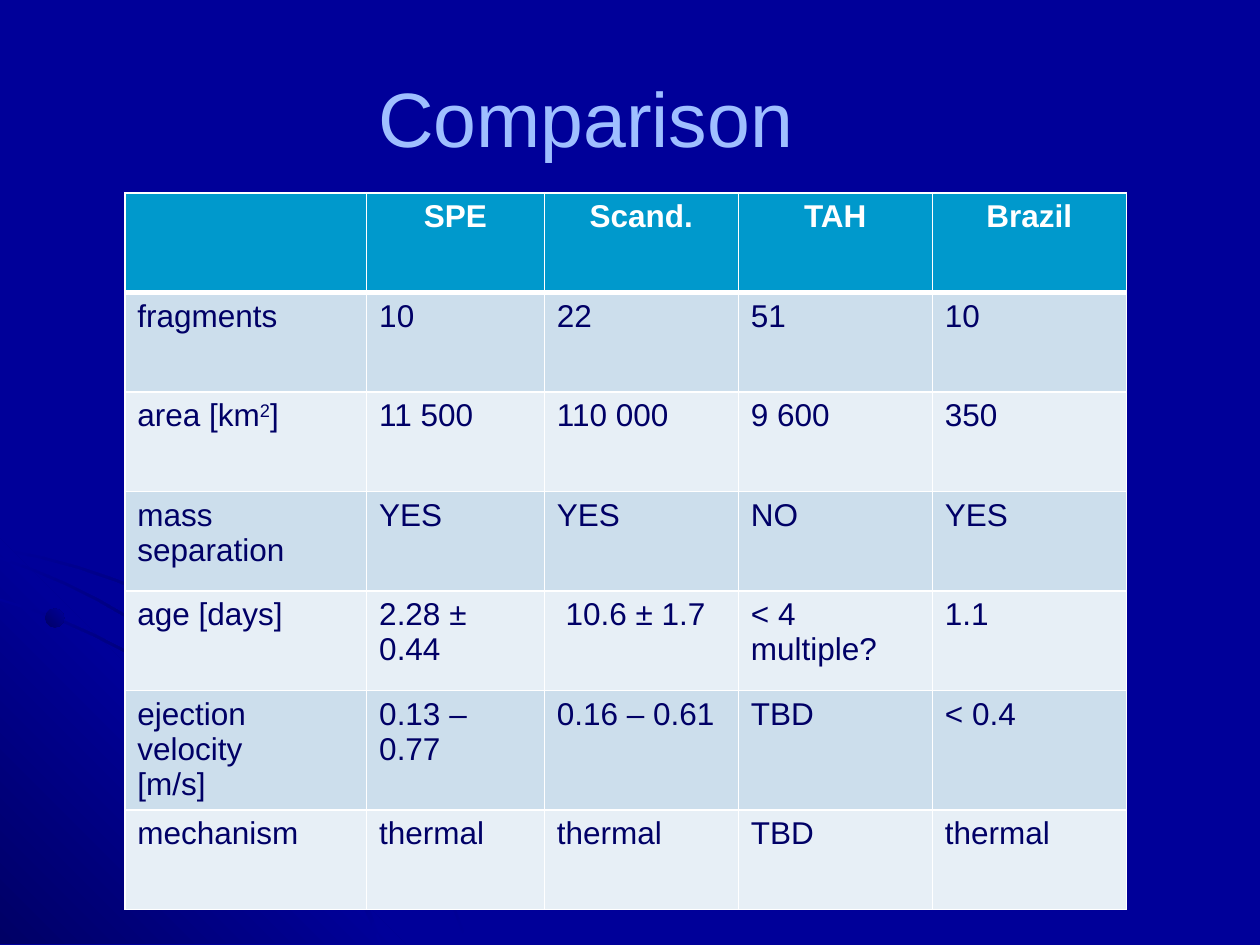
"""Build a slide comparing four asteroid groups in a table over a dark blue backdrop."""
from copy import deepcopy
from dataclasses import dataclass
from math import cos, hypot, radians, sin

from lxml.etree import SubElement
from pptx import Presentation
from pptx.dml.color import RGBColor
from pptx.enum.shapes import MSO_SHAPE as Preset
from pptx.enum.text import MSO_ANCHOR as Anchor, PP_ALIGN as Align
from pptx.oxml.ns import qn
from pptx.util import Inches, Pt


@dataclass(frozen=True)
class Theme:
    font: str = "Arial"
    blue: str = "000099"
    navy: str = "000066"
    title: str = "9FBFFF"
    header: str = "0099CC"
    bands: tuple = ("E7EFF6", "CCDEEC")
    white: str = "FFFFFF"
    title_size: int = 44
    table_size: int = 18
    thin_border: int = 1
    thick_border: int = 3


theme = Theme()


def paint_gradient(shape, colors, clockwise_angle):
    shape.shadow.inherit = False
    shape.line.fill.background()
    shape.fill.gradient()
    stops = shape._element.spPr.find(qn("a:gradFill")).find(qn("a:gsLst"))
    for extra in range(len(colors) - len(stops)):
        stops.append(deepcopy(stops[0]))
    for index, (stop, color) in enumerate(zip(shape.fill.gradient_stops, colors)):
        stop.position = index / (len(colors) - 1)
        stop.color.rgb = RGBColor.from_string(color)
    shape.fill.gradient_angle = 360 - clockwise_angle


def write_text(paragraph, text, size, color, bold=False):
    for index, part in enumerate(text.split("^")):
        run = paragraph.add_run()
        run.text = part
        for name, value in {"name": theme.font, "size": Pt(size), "bold": bold}.items():
            setattr(run.font, name, value)
        run.font.color.rgb = RGBColor.from_string(color)
        is_superscript = index % 2 == 1
        if is_superscript:
            run._r.get_or_add_rPr().set("baseline", "30000")


presentation = Presentation()
presentation.slide_width, presentation.slide_height = Inches(10), Inches(7.5)
slide = presentation.slides.add_slide(presentation.slide_layouts[6])
slide.background.fill.solid()
slide.background.fill.fore_color.rgb = RGBColor.from_string(theme.blue)

floor = 7.49
orbit_width = 0.02
orbit_steps = 16
orbits = [
    {"start_y": 4.35, "end_x": 3.72, "turn": 62},
    {"start_y": 4.75, "end_x": 3.03, "turn": 53},
    {"start_y": 4.42, "end_x": 3.03, "turn": 55},
]
orbit_outlines = []
for orbit in orbits:
    edges = []
    for inset in (0, orbit_width):
        start_y, end_x = orbit["start_y"] + inset, orbit["end_x"] - inset
        drop = floor - start_y
        chord = hypot(end_x, drop)
        half_turn = radians(orbit["turn"]) / 2
        radius = chord / (2 * sin(half_turn))
        edge = []
        for step in range(orbit_steps + 1):
            angle = half_turn * (2 * step / orbit_steps - 1)
            along = radius * sin(angle) / chord
            bulge = radius * (cos(angle) - cos(half_turn)) / chord
            x = end_x / 2 + along * end_x + bulge * drop
            y = start_y + drop / 2 + along * drop - bulge * end_x
            edge.append((x, y))
        edges.append(edge)
    upper_edge, lower_edge = edges
    orbit_outlines.append(upper_edge + lower_edge[::-1])

corner_side = 3.22
corner_outline = [(corner_side, floor), (0, floor), (0, floor - corner_side)]
orbit_colors = (theme.blue, theme.navy, theme.blue)
corner_colors = (theme.navy, theme.blue, theme.navy)
backdrop = [(outline, orbit_colors, 45) for outline in orbit_outlines]
backdrop.insert(1, (corner_outline, corner_colors, 315))
for outline, colors, angle in backdrop:
    points = [(Inches(x), Inches(y)) for x, y in outline]
    builder = slide.shapes.build_freeform(*points[0])
    builder.add_line_segments(points[1:], close=True)
    paint_gradient(builder.convert_to_shape(), colors, angle)

planets = [
    {"left": 0.36, "top": 4.83, "diameter": 0.15, "angle": 315},
    {"left": 2.67, "top": 6.74, "diameter": 0.16, "angle": 45},
    {"left": 1.37, "top": 4.73, "diameter": 0.21, "angle": 315},
]
for planet in planets:
    diameter = Inches(planet["diameter"])
    shape = slide.shapes.add_shape(
        Preset.OVAL, Inches(planet["left"]), Inches(planet["top"]), diameter, diameter)
    paint_gradient(shape, (theme.navy, theme.blue), planet["angle"])

title = slide.shapes.add_textbox(Inches(0.5), Inches(0.3), Inches(9), Inches(1.25))
title_format = {"word_wrap": True, "vertical_anchor": Anchor.MIDDLE, "margin_right": Inches(0.8)}
for name, value in title_format.items():
    setattr(title.text_frame, name, value)
title_paragraph = title.text_frame.paragraphs[0]
title_paragraph.alignment = Align.CENTER
write_text(title_paragraph, "Comparison", theme.title_size, theme.title)

rows = [
    ["", "SPE", "Scand.", "TAH", "Brazil"],
    ["fragments", "10", "22", "51", "10"],
    ["area [km^2^]", "11 500", "110 000", "9 600", "350"],
    ["mass separation", "YES", "YES", "NO", "YES"],
    ["age [days]", "2.28 ± 0.44", "10.6 ± 1.7", "< 4\nmultiple?", "1.1"],
    ["ejection velocity\n[m/s]", "0.13 – 0.77", "0.16 – 0.61", "TBD", "< 0.4"],
    ["mechanism", "thermal", "thermal", "TBD", "thermal"],
]
column_widths = [1.92, 1.41] + [1.54] * 3
row_height = 0.79
table = slide.shapes.add_table(
    len(rows), len(column_widths), Inches(0.99), Inches(1.53),
    Inches(sum(column_widths)), Inches(row_height * len(rows))).table
for column, width in zip(table.columns, column_widths):
    column.width = Inches(width)

for row_index, row in enumerate(rows):
    table.rows[row_index].height = Inches(row_height)
    is_header = row_index == 0
    fill_color = theme.header if is_header else theme.bands[row_index % 2]
    text_color = theme.white if is_header else theme.navy
    border_widths = {
        "a:lnL": theme.thin_border,
        "a:lnR": theme.thin_border,
        "a:lnT": theme.thick_border if row_index == 1 else theme.thin_border,
        "a:lnB": theme.thick_border if is_header else theme.thin_border,
    }
    for column_index, text in enumerate(row):
        cell = table.cell(row_index, column_index)
        properties = cell._tc.get_or_add_tcPr()
        for tag, width in border_widths.items():
            border = SubElement(properties, qn(tag), w=str(Pt(width)))
            border_fill = SubElement(border, qn("a:solidFill"))
            SubElement(border_fill, qn("a:srgbClr"), val=theme.white)
        cell.fill.solid()
        cell.fill.fore_color.rgb = RGBColor.from_string(fill_color)
        for line_index, line in enumerate(text.split("\n")):
            frame = cell.text_frame
            paragraph = frame.add_paragraph() if line_index else frame.paragraphs[0]
            paragraph.alignment = Align.CENTER if is_header else Align.LEFT
            write_text(paragraph, line, theme.table_size, text_color, is_header)

row_names = [row[0].split("\n")[0] for row in rows]
age_row, velocity_row = row_names.index("age [days]"), row_names.index("ejection velocity")
table.cell(age_row, rows[0].index("Scand.")).margin_left = Inches(0.17)
table.cell(velocity_row, 0).margin_bottom = Inches(0)
presentation.save("out.pptx")
